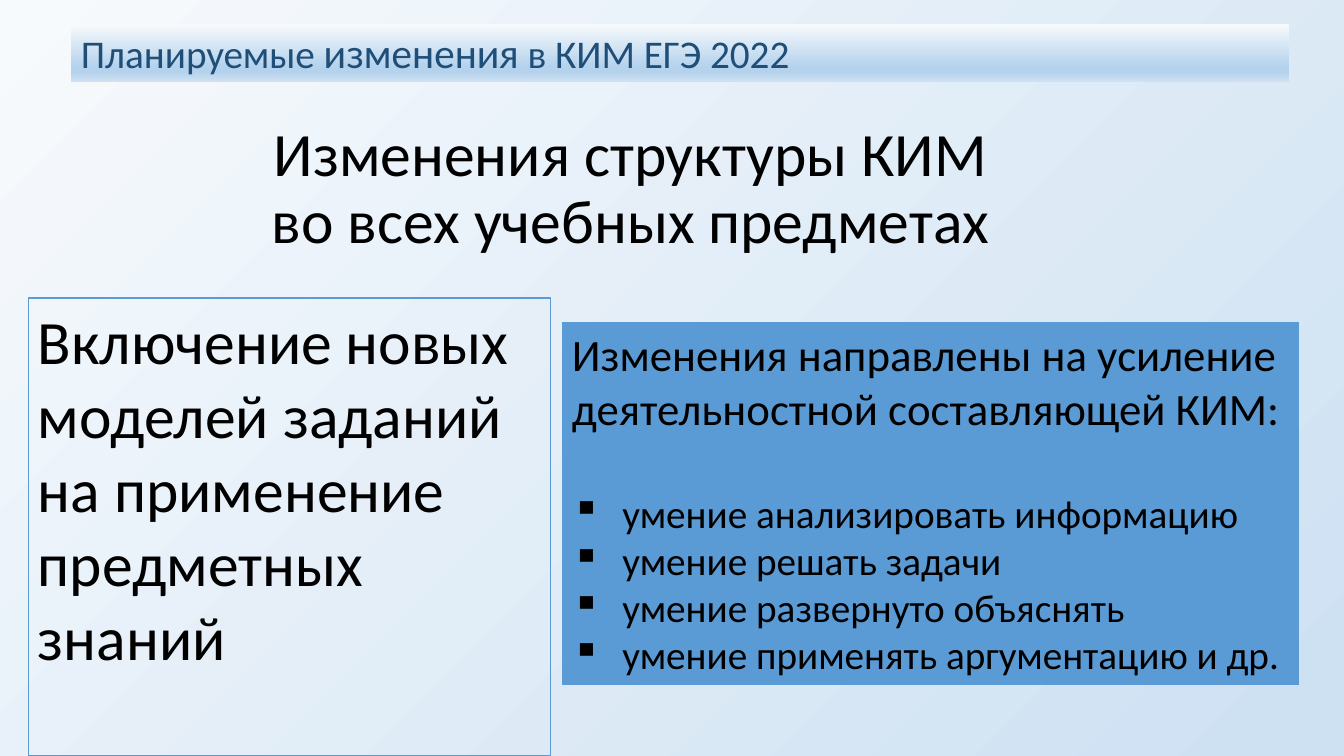
from pptx import Presentation, util as u
from pptx.dml.color import RGBColor
from pptx.enum import shapes, text
from pptx.oxml.xmlchemy import OxmlElement

PX = 914400 / 100.8

THEME = {
    "font": "Calibri", "accent_font": "Lato",
    "ink": "000000", "heading": "1F4E79", "blue": "5B9BD5",
    "pale": "F7FAFD", "middle": "B5D2EC", "soft": "CEE1F2",
    "title_size": 44, "lead_size": 32, "item_size": 28,
}


def set_gradient(fill, element, stops, angle):
    """Fill with (percent, colour) stops along a counter-clockwise angle."""
    fill.gradient()
    fill.gradient_angle = angle
    stop_list = element.xpath(".//a:gsLst")[0]
    stop_list.clear()
    for percent, colour in stops:
        stop = OxmlElement("a:gs")
        stop.set("pos", str(percent * 1000))
        value = OxmlElement("a:srgbClr")
        value.set("val", THEME[colour])
        stop.append(value)
        stop_list.append(stop)


def add_run(paragraph, words, size, colour="ink", font="font"):
    run = paragraph.add_run()
    run.text = words
    run.font.size = u.Pt(THEME[size])
    run.font.name = THEME[font]
    run.font.color.rgb = RGBColor.from_string(THEME[colour])


presentation = Presentation()
presentation.slide_width = u.Emu(round(1344 * PX))
presentation.slide_height = u.Emu(round(756 * PX))
slide = presentation.slides.add_slide(presentation.slide_layouts[6])
set_gradient(slide.background.fill, slide.element.cSld,
             [(0, "pale"), (97, "soft")], 315)

# Boxes, from back to front
boxes = {}
for name, left, top, width, height in [
    ("title", 102, 118, 1058, 144),
    ("models", 28, 298, 523, 458),
    ("skills", 562, 322, 737, 363),
    ("banner", 71, 24, 1218, 58),
]:
    shape = slide.shapes.add_shape(
        shapes.MSO_SHAPE.RECTANGLE,
        *(u.Emu(round(length * PX)) for length in (left, top, width, height)))
    shape.shadow.inherit = False
    shape.fill.background()
    shape.line.fill.background()
    shape.text_frame.word_wrap = True
    shape.text_frame.vertical_anchor = text.MSO_ANCHOR.TOP
    shape.text_frame.paragraphs[0].alignment = text.PP_ALIGN.LEFT
    boxes[name] = shape

# Title
boxes["title"].text_frame.vertical_anchor = text.MSO_ANCHOR.MIDDLE
paragraph = boxes["title"].text_frame.paragraphs[0]
paragraph.alignment = text.PP_ALIGN.CENTER
paragraph.line_spacing = 0.9
add_run(paragraph, "Изменения структуры КИМ", "title_size")
paragraph.add_line_break()
add_run(paragraph, "во всех учебных предметах", "title_size")

# New task models
boxes["models"].line.color.rgb = RGBColor.from_string(THEME["blue"])
boxes["models"].line.width = u.Pt(0.75)
add_run(boxes["models"].text_frame.paragraphs[0],
        "Включение новых моделей заданий на применение предметных знаний",
        "title_size")

# Skills
boxes["skills"].fill.solid()
boxes["skills"].fill.fore_color.rgb = RGBColor.from_string(THEME["blue"])
paragraph = boxes["skills"].text_frame.paragraphs[0]
paragraph.space_after = u.Pt(39)
add_run(paragraph,
        "Изменения направлены на усиление деятельностной составляющей КИМ:",
        "lead_size")
for skill in [
    "умение анализировать информацию",
    "умение решать задачи",
    "умение развернуто объяснять",
    "умение применять аргументацию и др.",
]:
    paragraph = boxes["skills"].text_frame.add_paragraph()
    paragraph.alignment = text.PP_ALIGN.LEFT
    add_run(paragraph, skill, "item_size")
    properties = paragraph._p.get_or_add_pPr()
    properties.set("marL", str(u.Inches(0.5)))
    properties.set("indent", str(-u.Inches(0.5)))
    bullet = OxmlElement("a:buChar")
    bullet.set("char", "▪")
    properties.append(bullet)

# Banner
set_gradient(boxes["banner"].fill, boxes["banner"].element.spPr,
             [(0, "pale"), (74, "middle"), (83, "middle"), (100, "soft")], 270)
paragraph = boxes["banner"].text_frame.paragraphs[0]
for words, font in [
    ("Планируемые ", "font"),
    ("изменения", "accent_font"),
    (" в КИМ ЕГЭ 2022", "font"),
]:
    add_run(paragraph, words, "item_size", "heading", font)

presentation.save("out.pptx")
